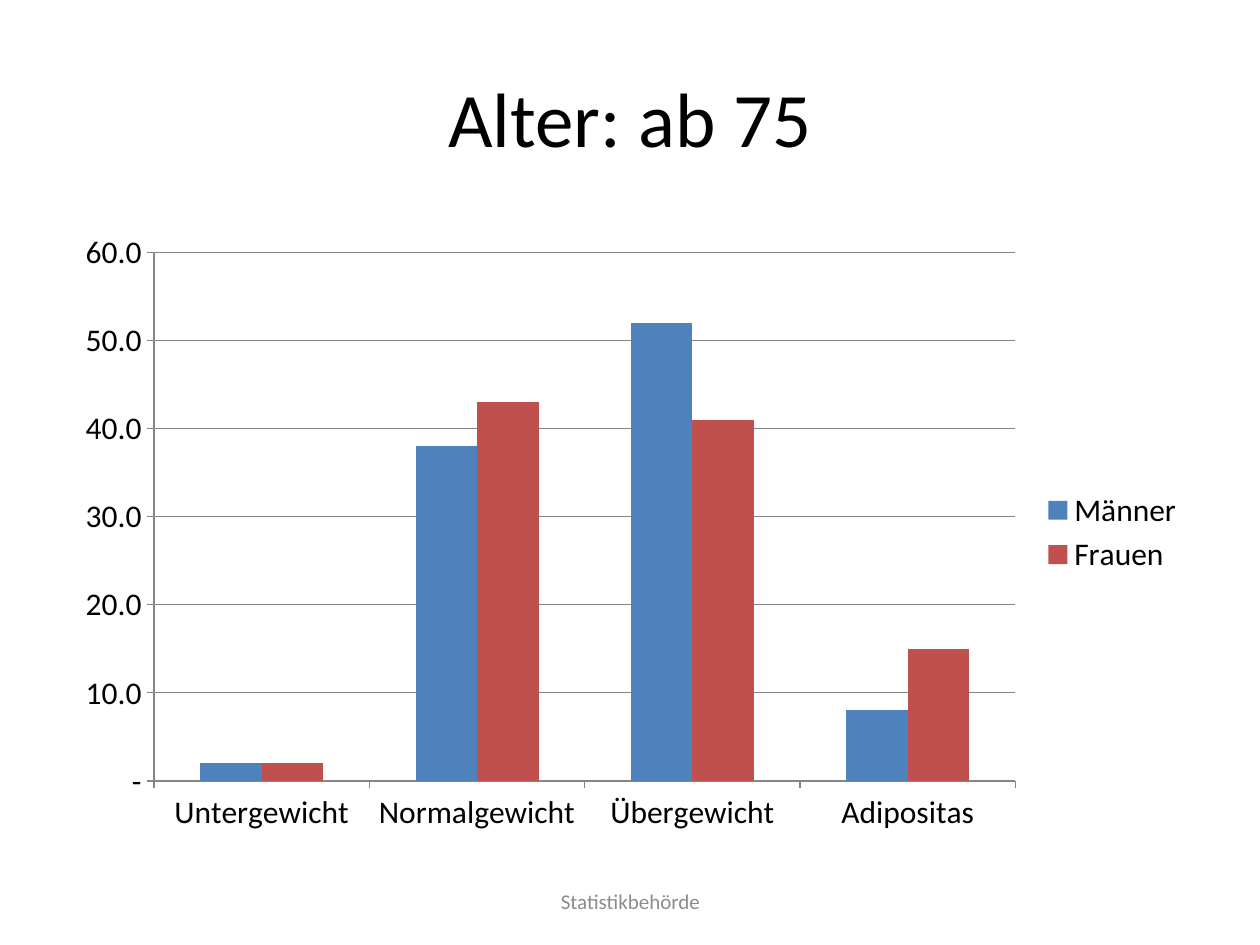
from dataclasses import dataclass

from pptx import Presentation
from pptx.chart.data import CategoryChartData
from pptx.dml.color import RGBColor
from pptx.enum.chart import XL_CHART_TYPE, XL_LEGEND_POSITION, XL_TICK_MARK
from pptx.enum.text import MSO_ANCHOR, PP_ALIGN
from pptx.util import Emu, Pt

CLUSTERED = XL_CHART_TYPE.COLUMN_CLUSTERED
LEGEND_RIGHT = XL_LEGEND_POSITION.RIGHT
TICK_OUTSIDE = XL_TICK_MARK.OUTSIDE
TICK_NONE = XL_TICK_MARK.NONE
MIDDLE = MSO_ANCHOR.MIDDLE
CENTER = PP_ALIGN.CENTER

EMU_PER_PX = 914400 / 126
TITLE_ONLY = 5


@dataclass(frozen=True)
class Theme:
    font: str = "Calibri"
    text: str = "000000"
    muted: str = "8C8C8C"
    background: str = "FFFFFF"
    line: str = "868686"
    men: str = "4F81BD"
    women: str = "C0504D"
    title_size: int = 44
    chart_size: int = 18
    footer_size: int = 12


THEME = Theme()
CATEGORIES = ["Untergewicht", "Normalgewicht", "Übergewicht", "Adipositas"]
SERIES = [
    ("Männer", [2, 38, 52, 8], THEME.men),
    ("Frauen", [2, 43, 41, 15], THEME.women),
]
NUMBER_FORMAT = '#,##0.0;#,##0.0;"-"'


def px(length):
    return Emu(round(length * EMU_PER_PX))


def frame(left, top, width, height):
    return px(left), px(top), px(width), px(height)


def style_font(font, size, color):
    font.name = THEME.font
    font.size = Pt(size)
    font.color.rgb = RGBColor.from_string(color)


def write_centered(box, text, size, color):
    text_frame = box.text_frame
    text_frame.word_wrap = True
    text_frame.vertical_anchor = MIDDLE
    para = text_frame.paragraphs[0]
    para.alignment = CENTER
    span = para.add_run()
    span.text = text
    style_font(span.font, size, color)


def add_title(page, text):
    title = page.shapes.title
    title.left, title.top, title.width, title.height = frame(63, 38, 1134, 158)
    write_centered(title, text, THEME.title_size, THEME.text)


def add_footer(page, text):
    box = page.shapes.add_textbox(*frame(431, 876, 399, 50))
    write_centered(box, text, THEME.footer_size, THEME.muted)


def style_line(line):
    line.color.rgb = RGBColor.from_string(THEME.line)
    line.width = Pt(0.75)


def style_axes(chart):
    for axis in (chart.category_axis, chart.value_axis):
        axis.major_tick_mark = TICK_OUTSIDE
        axis.minor_tick_mark = TICK_NONE
        style_line(axis.format.line)
    values = chart.value_axis
    values.minimum_scale, values.maximum_scale, values.major_unit = 0, 60, 10
    values.has_major_gridlines = True
    style_line(values.major_gridlines.format.line)
    values.tick_labels.number_format = NUMBER_FORMAT
    values.tick_labels.number_format_is_linked = False


def add_weight_chart(page):
    data = CategoryChartData(number_format=NUMBER_FORMAT)
    data.categories = CATEGORIES
    for name, values, _ in SERIES:
        data.add_series(name, values)
    chart = page.shapes.add_chart(CLUSTERED, *frame(63, 221, 1134, 623), data).chart
    style_font(chart.font, THEME.chart_size, THEME.text)
    chart.has_title = False
    chart.has_legend = True
    chart.legend.position = LEGEND_RIGHT
    chart.legend.include_in_layout = False
    style_axes(chart)

    plot = chart.plots[0]
    plot.gap_width = 150
    plot.overlap = 0
    plot.vary_by_categories = False
    for series, (_, _, color) in zip(plot.series, SERIES):
        series.format.fill.solid()
        series.format.fill.fore_color.rgb = RGBColor.from_string(color)
        series.invert_if_negative = False


def main():
    deck = Presentation()
    deck.slide_width, deck.slide_height = px(1260), px(945)
    page = deck.slides.add_slide(deck.slide_layouts[TITLE_ONLY])
    page.background.fill.solid()
    page.background.fill.fore_color.rgb = RGBColor.from_string(THEME.background)
    add_title(page, "Alter: ab 75")
    add_weight_chart(page)
    add_footer(page, "Statistikbehörde")
    deck.save("out.pptx")


if __name__ == "__main__":
    main()
